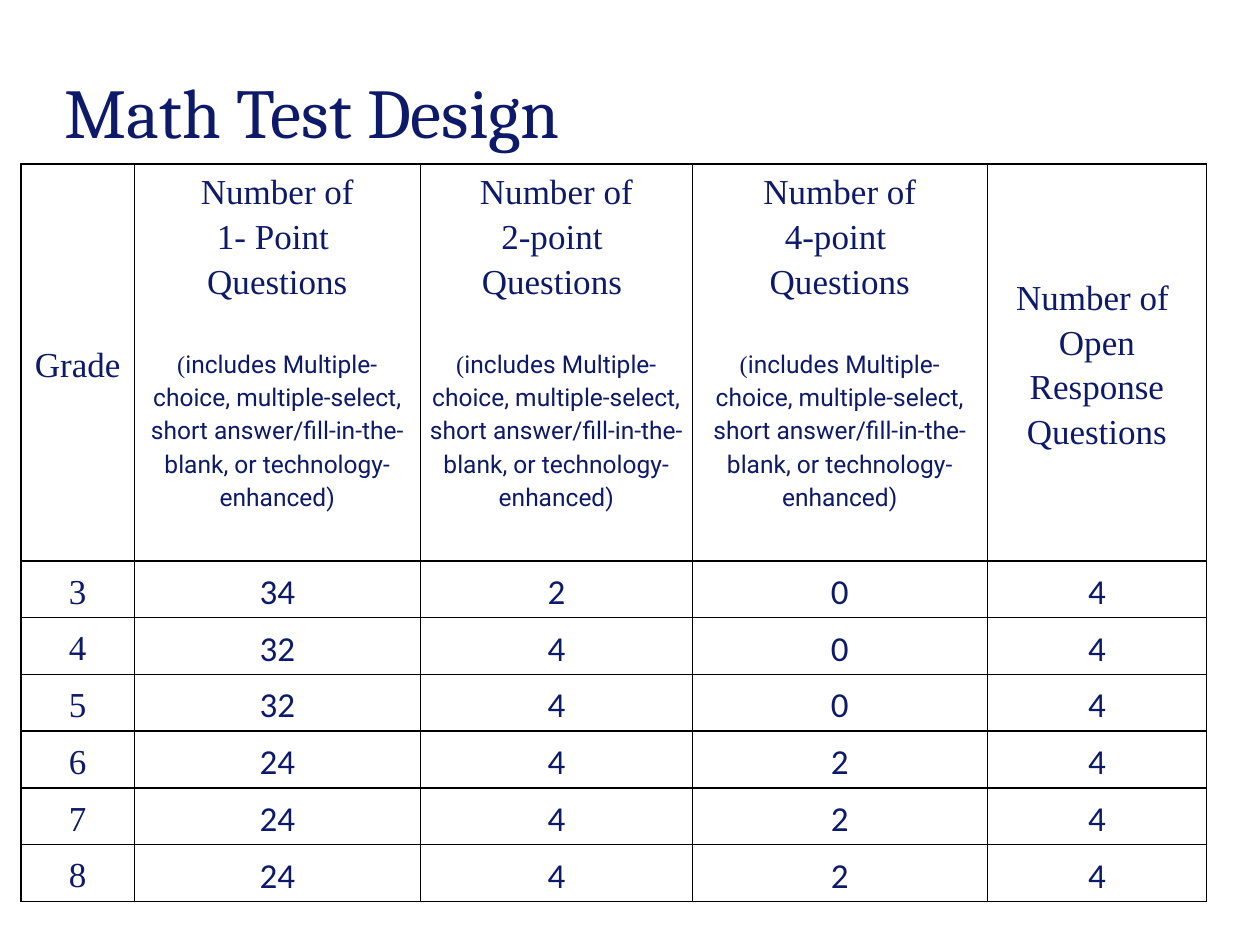
import pptx
import pptx.util
import pptx.dml.color
import pptx.enum.text
import pptx.oxml
import pptx.oxml.ns

Pt = pptx.util.Pt
ANCHOR = pptx.enum.text.MSO_ANCHOR
ALIGN = pptx.enum.text.PP_ALIGN

COLORS = {"text": "0D1969", "cell": "FFFFFF", "border": "000000"}
FORMATS = {
    "title": {"name": "Cambria", "size": Pt(40)},
    "heading": {"name": "Times New Roman", "size": Pt(20)},
    "bracket": {"name": "Times New Roman", "size": Pt(14)},
    "note": {"name": "Roboto", "size": Pt(14)},
    "number": {"name": "Calibri", "size": Pt(20)},
}

COLUMN_WIDTHS = [64.8, 163.4, 155.5, 168.5, 125.3]
HEADER_HEIGHT = 226.8
ROW_HEIGHT = 32.4
NOTE_GAP = 25.5

NOTE = ("includes Multiple-choice, multiple-select, short answer/"
        "fill-in-the-blank, or technology-enhanced)")
# Heading lines of each column, and whether the question types follow
HEADINGS = [
    (["Grade"], False),
    (["Number of", "1- Point ", "Questions"], True),
    (["Number of", "2-point ", "Questions "], True),
    (["Number of", "4-point ", "Questions"], True),
    (["Number of ", "Open Response Questions"], False),
]
GRADES = [
    (3, 34, 2, 0, 4),
    (4, 32, 4, 0, 4),
    (5, 32, 4, 0, 4),
    (6, 24, 4, 2, 4),
    (7, 24, 4, 2, 4),
    (8, 24, 4, 2, 4),
]


def set_attributes(target, values):
    for name, value in values.items():
        setattr(target, name, value)


def color(name):
    return pptx.dml.color.RGBColor.from_string(COLORS[name])


def add_run(paragraph, text, style):
    run = paragraph.add_run()
    run.text = text
    set_attributes(run.font, FORMATS[style])
    run.font.color.rgb = color("text")


def add_title(slide, text):
    shape = slide.shapes.add_textbox(Pt(30), Pt(12), Pt(624), Pt(125))
    set_attributes(shape.text_frame, {"word_wrap": True, "vertical_anchor": ANCHOR.MIDDLE})
    shape.height = Pt(102)
    add_run(shape.text_frame.paragraphs[0], text, "title")


def add_borders(cell):
    properties = cell._tc.get_or_add_tcPr()
    for side in ("lnL", "lnR", "lnT", "lnB"):
        properties.append(pptx.oxml.parse_xml(
            f'<a:{side} {pptx.oxml.ns.nsdecls("a")} w="{Pt(1)}"><a:solidFill>'
            f'<a:srgbClr val="{COLORS["border"]}"/></a:solidFill></a:{side}>'))


def fill_cell(cell, paragraphs, anchor=ANCHOR.MIDDLE):
    """Write paragraphs, each a list of (text, style) runs, into a cell."""
    set_attributes(cell, {
        "margin_left": Pt(5.4), "margin_right": Pt(5.4),
        "margin_top": Pt(2), "margin_bottom": Pt(2),
        "vertical_anchor": anchor,
    })
    add_borders(cell)
    cell.fill.solid()
    cell.fill.fore_color.rgb = color("cell")
    frame = cell.text_frame
    for index, runs in enumerate(paragraphs):
        paragraph = frame.add_paragraph() if index else frame.paragraphs[0]
        set_attributes(paragraph, {"alignment": ALIGN.CENTER, "line_spacing": 1.15})
        for text, style in runs:
            add_run(paragraph, text, style)


def add_heading(cell, lines, has_note):
    paragraphs = [[(line, "heading")] for line in lines]
    if not has_note:
        fill_cell(cell, paragraphs)
        return
    paragraphs.append([("(", "bracket"), (NOTE, "note")])
    fill_cell(cell, paragraphs, ANCHOR.TOP)
    cell.text_frame.paragraphs[-1].space_before = Pt(NOTE_GAP)


def add_design_table(slide):
    height = HEADER_HEIGHT + ROW_HEIGHT * len(GRADES)
    table = slide.shapes.add_table(
        len(GRADES) + 1, len(HEADINGS), Pt(12), Pt(93.8),
        Pt(sum(COLUMN_WIDTHS)), Pt(height)).table
    set_attributes(table, {"first_row": False, "horz_banding": False})
    for column, width in zip(table.columns, COLUMN_WIDTHS):
        column.width = Pt(width)
    for index, row in enumerate(table.rows):
        row.height = Pt(ROW_HEIGHT if index else HEADER_HEIGHT)

    # Heading row
    for column, (lines, has_note) in enumerate(HEADINGS):
        add_heading(table.cell(0, column), lines, has_note)

    # One row per grade
    for row, values in enumerate(GRADES, start=1):
        for column, value in enumerate(values):
            style = "number" if column else "heading"
            fill_cell(table.cell(row, column), [[(str(value), style)]])


def main():
    presentation = pptx.Presentation()
    set_attributes(presentation, {"slide_width": Pt(720), "slide_height": Pt(540)})
    slide = presentation.slides.add_slide(presentation.slide_layouts[6])
    add_title(slide, "Math Test Design")
    add_design_table(slide)
    presentation.save("out.pptx")


if __name__ == "__main__":
    main()
